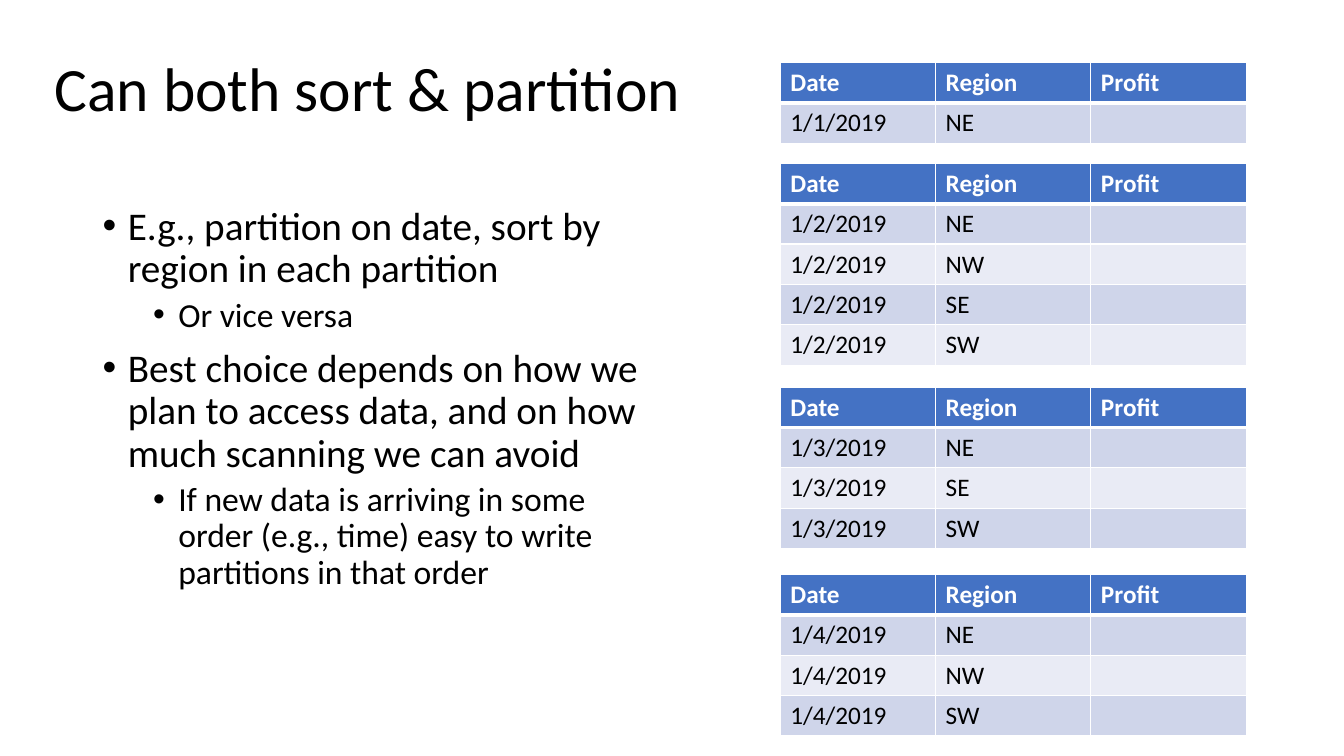
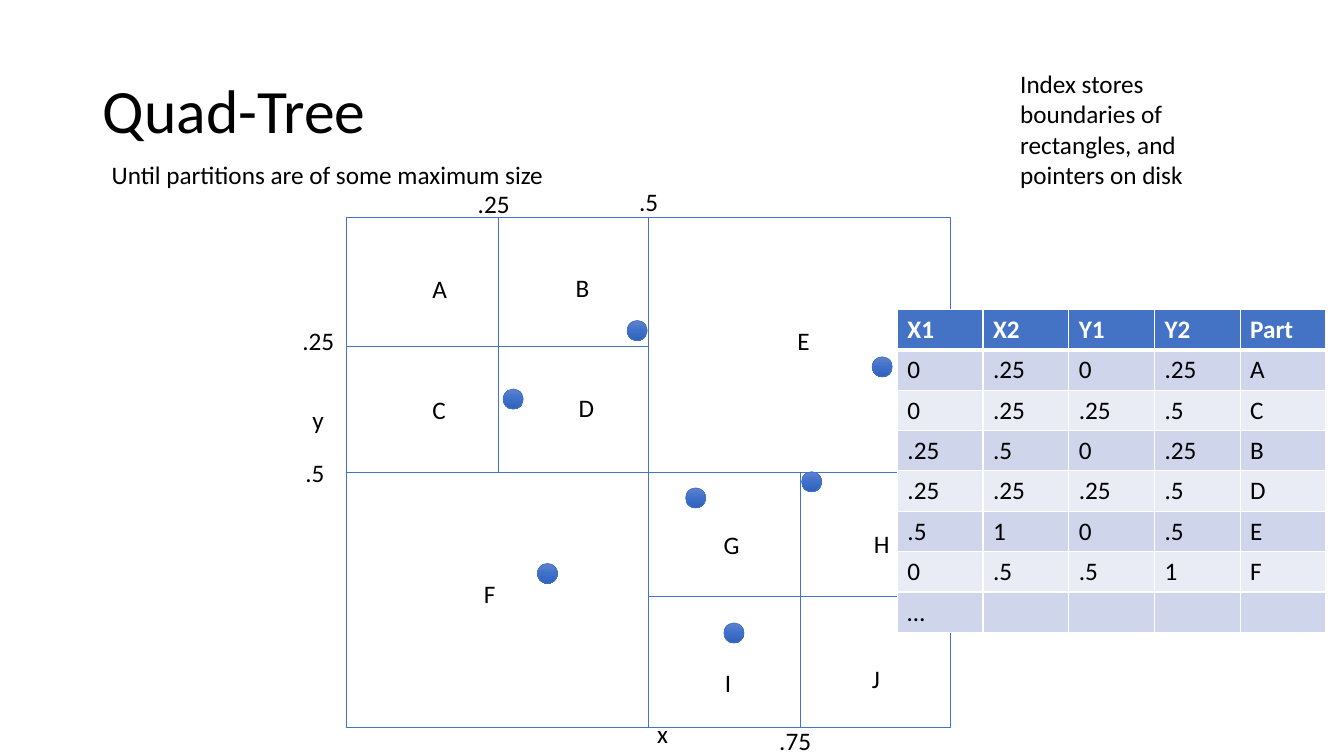
import copy

import pptx
import pptx.dml.color
import pptx.enum.shapes
import pptx.enum.text
import pptx.oxml.ns
import pptx.util
from lxml import etree

FONT = "Calibri"
BLACK, WHITE, BLUE = "000000", "FFFFFF", "4472C4"
BANDS = ("CFD5EA", "E9EBF5")
DOT_GRADIENT = ("6183CB", "3E70CA", "3062BB")
WIDTH, HEIGHT = 13.33, 7.5
TITLE_ONLY = 5
ROW_HEIGHT = 0.4
LABEL_HEIGHT = 0.4

BULLETS = [
    (0, "E.g., partition on date, sort by region in each partition"),
    (1, "Or vice versa"),
    (0, "Best choice depends on how we plan to access data, and on how much scanning we can avoid"),
    (1, "If new data is arriving in some order (e.g., time) easy to write partitions in that order"),
]
# Per bullet level: text size, left indent, space before
LEVELS = [(28, 0.25, 10), (24, 0.75, 5)]

PARTITION_HEADER = ("Date", "Region", "Profit")
PARTITIONS = [
    (0.62, "1/1/2019", ("NE",)),
    (1.62, "1/2/2019", ("NE", "NW", "SE", "SW")),
    (3.84, "1/3/2019", ("NE", "SE", "SW")),
    (5.70, "1/4/2019", ("NE", "NW", "SW")),
]

INDEX_ROWS = [
    ("X1", "X2", "Y1", "Y2", "Part"),
    ("0", ".25", "0", ".25", "A"),
    ("0", ".25", ".25", ".5", "C"),
    (".25", ".5", "0", ".25", "B"),
    (".25", ".25", ".25", ".5", "D"),
    (".5", "1", "0", ".5", "E"),
    ("0", ".5", ".5", "1", "F"),
    ("…", "", "", "", ""),
]

# Quad-tree grid lines; each region is column, row, span
GRID_X = (3.44, 4.94, 6.43, 7.94, 9.43)
GRID_Y = (2.16, 3.44, 4.69, 5.92, 7.22)
REGIONS = [
    (2, 0, 2), (0, 2, 2),
    (0, 0, 1), (1, 0, 1), (0, 1, 1), (1, 1, 1),
    (2, 2, 1), (3, 2, 1), (2, 3, 1), (3, 3, 1),
]
DOT_SIZE = 0.2
DOTS = [(4.99, 3.86), (6.8, 4.84), (6.22, 3.18), (8.65, 3.54),
        (7.95, 4.68), (5.33, 5.59), (7.18, 6.18)]
LABELS = [
    ("x", 6.42, 7.08), ("y", 3, 3.96),
    (".25", 4.64, 1.82), (".5", 6.24, 1.8), (".75", 7.63, 7.15),
    (".25", 2.9, 3.18), (".5", 2.93, 4.49),
    ("A", 4.19, 2.66), ("B", 5.61, 2.65), ("C", 4.19, 3.86),
    ("D", 5.64, 3.84), ("E", 7.81, 3.18), ("F", 4.7, 5.69),
    ("G", 7.08, 5.2), ("H", 8.57, 5.19), ("I", 7.09, 6.57), ("J", 8.55, 6.53),
]


def color(value):
    return pptx.dml.color.RGBColor.from_string(value)


def inches(*values):
    return [pptx.util.Inches(value) for value in values]


def write(para, text, size=18, fill=BLACK, bold=False, spacing=None, before=0):
    para.alignment = pptx.enum.text.PP_ALIGN.LEFT
    para.space_before = pptx.util.Pt(before)
    if spacing:
        para.line_spacing = spacing
    span = para.add_run()
    span.text = text
    span.font.name = FONT
    span.font.size = pptx.util.Pt(size)
    span.font.bold = bold
    span.font.color.rgb = color(fill)


def add_text(shapes, text, left, top, width, height=LABEL_HEIGHT, **style):
    box = shapes.add_textbox(*inches(left, top, width, height))
    box.text_frame.word_wrap = True
    write(box.text_frame.paragraphs[0], text, **style)


def add_titled_slide(deck, text, left, top):
    slide = deck.slides.add_slide(deck.slide_layouts[TITLE_ONLY])
    title = slide.shapes.title
    title.left, title.top, title.width, title.height = inches(left, top, 11.5, 1.45)
    frame = title.text_frame
    frame.auto_size = pptx.enum.text.MSO_AUTO_SIZE.NONE
    frame.vertical_anchor = pptx.enum.text.MSO_ANCHOR.MIDDLE
    write(frame.paragraphs[0], text, size=44, spacing=0.9)
    return slide


def add_bullets(slide, items, *place):
    box = slide.shapes.add_textbox(*inches(*place))
    frame = box.text_frame
    frame.word_wrap = True
    for number, (level, text) in enumerate(items):
        para = frame.add_paragraph() if number else frame.paragraphs[0]
        size, indent, before = LEVELS[level]
        write(para, text, size=size, spacing=0.9, before=before)
        para.level = level
        properties = para._p.get_or_add_pPr()
        properties.set("marL", str(pptx.util.Inches(indent)))
        properties.set("indent", str(pptx.util.Inches(-0.25)))
        qn = pptx.oxml.ns.qn
        etree.SubElement(properties, qn("a:buFont")).set("typeface", "Arial")
        etree.SubElement(properties, qn("a:buChar")).set("char", "•")


def set_borders(cell, bottom):
    """Give the cell white edges, with the bottom one in its own width."""
    properties = cell._tc.get_or_add_tcPr()
    qn = pptx.oxml.ns.qn
    for number, (edge, width) in enumerate((("L", 1), ("R", 1), ("T", 1), ("B", bottom))):
        line = etree.Element(qn("a:ln" + edge), w=str(pptx.util.Pt(width)))
        fill = etree.SubElement(line, qn("a:solidFill"))
        etree.SubElement(fill, qn("a:srgbClr")).set("val", WHITE)
        properties.insert(number, line)


def add_banded_table(slide, rows, left, top, column_width):
    columns = len(rows[0])
    table = slide.shapes.add_table(
        len(rows), columns,
        *inches(left, top, column_width * columns, ROW_HEIGHT * len(rows))).table
    for column in table.columns:
        column.width = pptx.util.Inches(column_width)
    for row, texts in enumerate(rows):
        header = row == 0
        table.rows[row].height = pptx.util.Inches(ROW_HEIGHT)
        for column, text in enumerate(texts):
            cell = table.cell(row, column)
            cell.fill.solid()
            cell.fill.fore_color.rgb = color(BLUE if header else BANDS[(row - 1) % 2])
            set_borders(cell, bottom=3 if header or row == 0 else 1)
            if text:
                write(cell.text_frame.paragraphs[0], text,
                      fill=WHITE if header else BLACK, bold=header)


def add_outlined(shapes, kind, *place):
    shape = shapes.add_shape(kind, *inches(*place))
    shape.shadow.inherit = False
    shape.fill.background()
    shape.line.color.rgb = color(BLUE)
    shape.line.width = pptx.util.Pt(0.5)
    return shape


def add_dot(shapes, left, top):
    dot = add_outlined(shapes, pptx.enum.shapes.MSO_SHAPE.OVAL,
                       left, top, DOT_SIZE, DOT_SIZE)
    dot.fill.gradient()
    dot.fill.gradient_angle = 270
    stop_list = dot.element.xpath(".//a:gsLst")[0]
    stop_list.insert(1, copy.deepcopy(stop_list[0]))
    for number, (stop, value) in enumerate(zip(dot.fill.gradient_stops, DOT_GRADIENT)):
        stop.position = number / 2
        stop.color.rgb = color(value)


def add_quad_tree(slide):
    shapes = slide.shapes.add_group_shape().shapes
    for left, top in DOTS:
        add_dot(shapes, left, top)
    for column, row, span in REGIONS:
        left, top = GRID_X[column], GRID_Y[row]
        add_outlined(shapes, pptx.enum.shapes.MSO_SHAPE.RECTANGLE, left, top,
                     GRID_X[column + span] - left, GRID_Y[row + span] - top)
    for text, left, top in LABELS:
        add_text(shapes, text, left, top, 0.54)


def build_partition_slide(deck):
    slide = add_titled_slide(deck, "Can both sort & partition", 0.44, 0.18)
    add_bullets(slide, BULLETS, 0.92, 2, 5.62, 4.76)
    for top, date, regions in PARTITIONS:
        rows = [PARTITION_HEADER] + [(date, region, "") for region in regions]
        add_banded_table(slide, rows, 7.74, top, 1.54)


def build_quad_tree_slide(deck):
    slide = add_titled_slide(deck, "Quad-Tree", 0.92, 0.4)
    add_text(slide.shapes, "Until partitions are of some maximum size", 1.01, 1.53, 4.63)
    add_text(slide.shapes, "Index stores boundaries of rectangles, and pointers on disk",
             10.02, 0.63, 2.58, 1.31)
    add_quad_tree(slide)
    add_banded_table(slide, INDEX_ROWS, 8.9, 3.07, 0.85)


def main():
    deck = pptx.Presentation()
    deck.slide_width, deck.slide_height = inches(WIDTH, HEIGHT)
    build_partition_slide(deck)
    build_quad_tree_slide(deck)
    deck.save("out.pptx")


if __name__ == "__main__":
    main()
